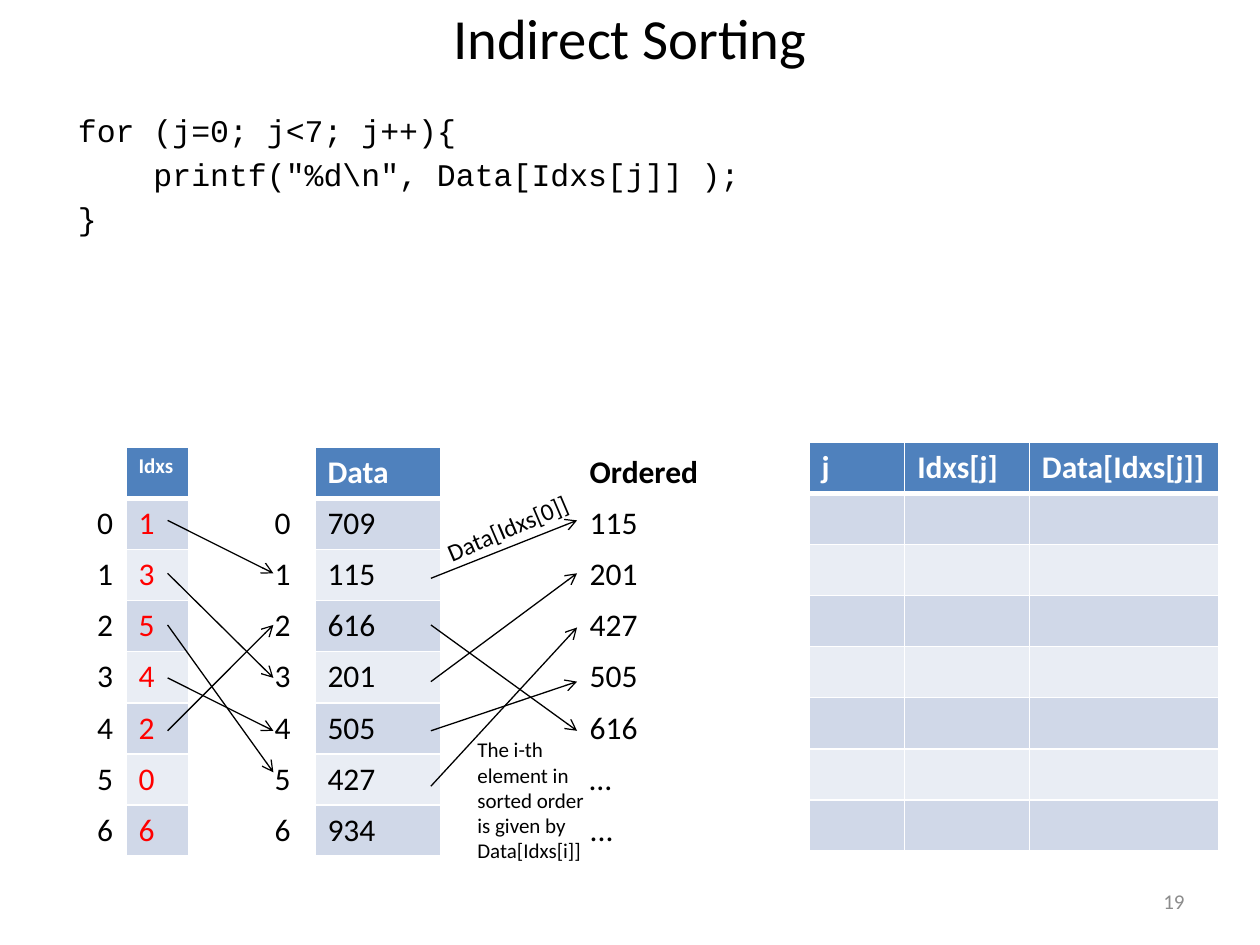
from dataclasses import dataclass

from lxml.etree import SubElement
from pptx import Presentation
from pptx.dml.color import RGBColor
from pptx.enum.shapes import MSO_CONNECTOR
from pptx.enum.text import MSO_ANCHOR, MSO_AUTO_SIZE, PP_ALIGN
from pptx.oxml.ns import qn
from pptx.slide import Slide
from pptx.util import Inches, Pt

COLORS = {
    "ink": "000000", "white": "FFFFFF", "muted": "8C8C8C", "index": "FF0000",
    "header": "4F81BD", "odd": "D0D8E8", "even": "E9EDF4",
}
DATA = [709, 115, 616, 201, 505, 427, 934]
IDXS = [1, 3, 5, 4, 2, 0, 6]
ORDERED = ["115", "201", "427", "505", "616", "…", "..."]
ROW_HEIGHT = 3.24 / 8
IDXS_Y = [4.13, 4.55, 4.96, 5.38, 5.8]
DATA_LABEL_Y = {1: 4.55, 2: 4.96, 3: 5.38, 4: 5.8, 5: 6.13}
DATA_Y = {1: 4.59, 2: 4.96, 3: 5.41, 4: 5.8, 5: 6.24}
ORDERED_Y = [4.13, 4.55, 4.98, 5.41, 5.8]


@dataclass
class Column:
    header: str
    width: float
    values: list
    filled: bool = True
    color: str = "ink"
    header_size: int = 18


@dataclass
class Grid:
    left: float
    top: float
    columns: list[Column]


@dataclass
class Label:
    lines: list[str]
    box: tuple[float, float, float, float]
    size: float
    color: str = "ink"
    font: str = "Calibri"
    align: PP_ALIGN = PP_ALIGN.LEFT
    anchor: MSO_ANCHOR = MSO_ANCHOR.TOP
    wrap: bool = True
    rotation: float = 0
    space_before: float = 0
    indented_line: int = -1


@dataclass
class Arrow:
    start: tuple[float, float]
    end: tuple[float, float]


def rgb(name: str) -> RGBColor:
    """Return the named colour."""
    return RGBColor.from_string(COLORS[name])


def style_font(paragraph, size: float, color: str, font: str = "Calibri", bold: bool = False) -> None:
    """Set the font of a whole paragraph."""
    paragraph.font.size = Pt(size)
    paragraph.font.name = font
    paragraph.font.bold = bold
    paragraph.font.color.rgb = rgb(color)


def add_borders(cell, bottom_width: int) -> None:
    """Give a cell white borders with the chosen bottom width."""
    properties = cell._tc.get_or_add_tcPr()
    for side, width in (("L", 1), ("R", 1), ("T", 1), ("B", bottom_width)):
        border = SubElement(properties, qn(f"a:ln{side}"), w=str(Pt(width)))
        fill = SubElement(border, qn("a:solidFill"))
        SubElement(fill, qn("a:srgbClr"), val=COLORS["white"])


def draw_cell(cell, column: Column, row: int) -> None:
    """Fill one cell of a column."""
    is_header = row == 0
    add_borders(cell, 3 if is_header else 1)
    if column.filled:
        cell.fill.solid()
        cell.fill.fore_color.rgb = rgb("header" if is_header else "odd" if row % 2 else "even")
    else:
        cell.fill.background()
    cell.text = column.header if is_header else str(column.values[row - 1])
    header_color = "white" if column.filled else "ink"
    style_font(
        cell.text_frame.paragraphs[0],
        column.header_size if is_header else 18,
        header_color if is_header else column.color,
        bold=is_header,
    )


def draw_grid(slide: Slide, grid: Grid) -> None:
    """Draw a table made of columns."""
    row_count = len(DATA) + 1
    width = sum(column.width for column in grid.columns)
    table = slide.shapes.add_table(
        row_count, len(grid.columns), Inches(grid.left), Inches(grid.top),
        Inches(width), Inches(ROW_HEIGHT * row_count),
    ).table
    for row in table.rows:
        row.height = Inches(ROW_HEIGHT)
    for position, column in enumerate(grid.columns):
        table.columns[position].width = Inches(column.width)
        for row in range(row_count):
            draw_cell(table.cell(row, position), column, row)


def draw_label(slide: Slide, label: Label) -> None:
    """Draw a text box."""
    box = slide.shapes.add_textbox(*(Inches(length) for length in label.box))
    box.rotation = label.rotation
    frame = box.text_frame
    frame.word_wrap = label.wrap
    frame.auto_size = MSO_AUTO_SIZE.NONE
    frame.vertical_anchor = label.anchor
    frame.text = "\n".join(label.lines)
    for number, paragraph in enumerate(frame.paragraphs):
        paragraph.alignment = label.align
        paragraph.space_before = Pt(label.space_before)
        style_font(paragraph, label.size, label.color, label.font)
        if number == label.indented_line:
            paragraph._p.get_or_add_pPr().set("marL", str(Inches(0.6)))


def draw_arrow(slide: Slide, arrow: Arrow) -> None:
    """Draw a thin line with an open arrowhead."""
    ends = (Inches(length) for length in (*arrow.start, *arrow.end))
    connector = slide.shapes.add_connector(MSO_CONNECTOR.STRAIGHT, *ends)
    connector.line.width = Pt(0.75)
    connector.line.color.rgb = rgb("ink")
    SubElement(connector.line._get_or_add_ln(), qn("a:tailEnd"), type="arrow")
    SubElement(connector._element.spPr, qn("a:effectLst"))


def main() -> None:
    """Build the indirect sorting slide."""
    presentation = Presentation()
    presentation.slide_width, presentation.slide_height = Inches(10), Inches(7.5)
    slide = presentation.slides.add_slide(presentation.slide_layouts[6])

    positions = list(range(len(DATA)))
    blanks = [""] * len(DATA)
    grids = [
        Grid(2.08, 3.55, [Column("", 0.42, positions, False), Column("Data", 1, DATA)]),
        Grid(0.67, 3.55, [
            Column("", 0.33, positions, False),
            Column("Idxs", 0.5, IDXS, color="index", header_size=12),
        ]),
        Grid(4.58, 3.55, [Column("Ordered", 1.17, ORDERED, False)]),
        Grid(6.42, 3.51, [
            Column("j", 0.76, blanks), Column("Idxs[j]", 0.99, blanks),
            Column("Data[Idxs[j]]", 1.5, blanks),
        ]),
    ]
    labels = [
        Label(["Indirect Sorting"], (0.5, 0, 9, 0.58), 32.4,
              align=PP_ALIGN.CENTER, anchor=MSO_ANCHOR.MIDDLE),
        Label(["19"], (7.17, 6.95, 2.33, 0.4), 12, "muted",
              align=PP_ALIGN.RIGHT, anchor=MSO_ANCHOR.MIDDLE),
        Label(["Data[Idxs[0]]"], (3.42, 4.02, 1.23, 0.34), 14, wrap=False, rotation=336.8),
        Label(["The i-th element in sorted order is given by Data[Idxs[i]]"],
              (3.69, 5.8, 1.08, 1.11), 12),
        Label(["for (j=0; j<7; j++){", 'printf("%d\\n", Data[Idxs[j]] );', "}"],
              (0.52, 0.83, 5.56, 2.19), 18, font="Courier New",
              space_before=3.6, indented_line=1),
    ]
    for grid in grids:
        draw_grid(slide, grid)
    for idxs_y, ordered_y, target in zip(IDXS_Y, ORDERED_Y, IDXS):
        draw_arrow(slide, Arrow((1.33, idxs_y), (2.17, DATA_LABEL_Y[target])))
        draw_arrow(slide, Arrow((3.42, DATA_Y[target]), (4.58, ordered_y)))
    for label in labels:
        draw_label(slide, label)
    presentation.save("out.pptx")


if __name__ == "__main__":
    main()
